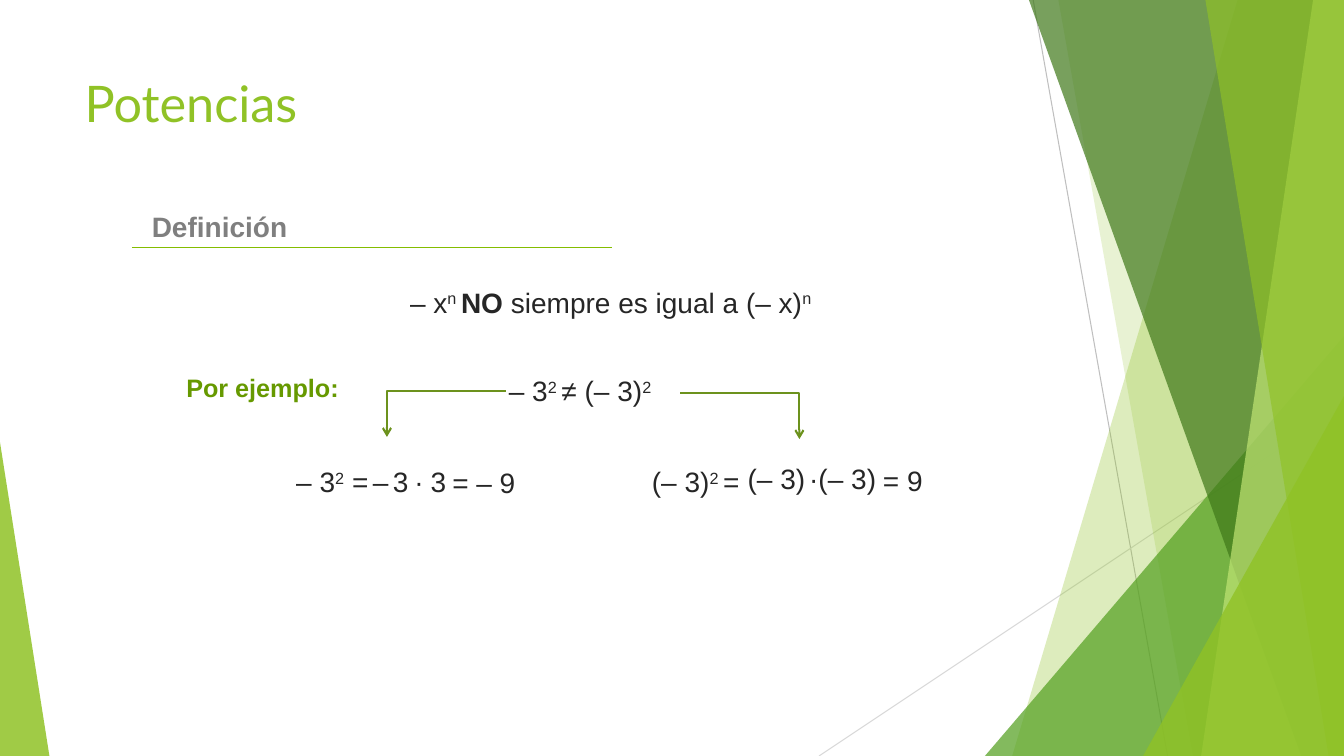
from dataclasses import dataclass

import pptx
import pptx.dml.color
import pptx.enum.shapes
import pptx.enum.text
import pptx.oxml.ns
import pptx.util
from lxml import etree

Pt = pptx.util.Pt
qn = pptx.oxml.ns.qn
CONNECTOR = pptx.enum.shapes.MSO_CONNECTOR


@dataclass(frozen=True)
class Theme:
    title_font: str = "Lato"
    body_font: str = "Arial"
    title_size: int = 36
    body_size: int = 20
    label_size: int = 18
    lime: str = "90C226"
    green: str = "54A021"
    forest: str = "3F7819"
    pale: str = "C0E474"
    ink: str = "262626"
    grey: str = "7F7F7F"
    label: str = "669900"
    rule: str = "84BD00"
    arrow: str = "6C921D"
    hairline: str = "BFBFBF"
    light_hairline: str = "D9D9D9"


T = Theme()
W, H = 960, 540


def rgb(color):
    return pptx.dml.color.RGBColor.from_string(color)


def set_format(r, color, **values):
    r.font.color.rgb = rgb(color)
    for name, value in values.items():
        setattr(r.font, name, value)


def fill(sp, color, opacity):
    """Fill a shape with a colour of the given opacity in percent."""
    sp.shadow.inherit = False
    sp.line.fill.background()
    sp.fill.solid()
    sp.fill.fore_color.rgb = rgb(color)
    clr = sp.fill._xPr.find(".//" + qn("a:srgbClr"))
    etree.SubElement(clr, qn("a:alpha")).set("val", str(opacity * 1000))


def add_line(s, x1, y1, x2, y2, color, width=0.75, kind=CONNECTOR.STRAIGHT):
    c = s.shapes.add_connector(kind, Pt(x1), Pt(y1), Pt(x2), Pt(y2))
    c.line.color.rgb = rgb(color)
    c.line.width = Pt(width)
    etree.SubElement(c._element.spPr, qn("a:effectLst"))
    return c


def add_elbow_arrow(s, x, y, dx, dy):
    """Arrow that runs sideways by dx, then down by dy."""
    c = add_line(s, x, y, x + dx, y + dy, T.arrow, 1.5, CONNECTOR.ELBOW)
    c._element.spPr.find(qn("a:prstGeom")).set("prst", "bentConnector2")
    etree.SubElement(c.line._get_or_add_ln(), qn("a:tailEnd")).set("type", "arrow")


def add_text(s, x, y, w, h, runs, color=T.ink, size=T.body_size, bold=False):
    """Add one line of text; runs are (text, style) with style '', 'sup' or 'bold'."""
    tf = s.shapes.add_textbox(Pt(x), Pt(y), Pt(w), Pt(h)).text_frame
    tf.word_wrap = False
    for text, style in runs:
        r = tf.paragraphs[0].add_run()
        r.text = text
        set_format(r, color, name=T.body_font, size=Pt(size),
                   bold=bold or style == "bold")
        if style == "sup":
            r.font._element.set("baseline", "30000")


def add_decoration(s, w, h):
    """Translucent facets along the slide edges."""
    add_line(s, 738, 0, 834, h, T.hairline)
    add_line(s, w, 290, 585, h, T.light_hairline)

    def facet(top, bottom, color, opacity):
        fb = s.shapes.build_freeform(Pt(top), 0)
        fb.add_line_segments([(Pt(w), 0), (Pt(w), Pt(h)), (Pt(bottom), Pt(h))])
        fill(fb.convert_to_shape(), color, opacity)

    def corner(x, y, width, apex, color, opacity):
        sp = s.shapes.add_shape(pptx.enum.shapes.MSO_SHAPE.ISOSCELES_TRIANGLE,
                                Pt(x), Pt(y), Pt(width), Pt(h - y))
        sp.adjustments[0] = apex
        fill(sp, color, opacity)

    facet(884, 723, T.lime, 30)
    facet(756, 852, T.lime, 20)
    corner(703.5, 240, w - 703.5, 1, T.green, 72)
    facet(735, 929.5, T.forest, 70)
    facet(938, 858, T.pale, 70)
    facet(861, 949, T.lime, 65)
    corner(816.5, 283, w - 816.5, 1, T.lime, 80)
    corner(0, 316, 35.3, 0, T.lime, 85)


def add_title(s, x, y, w, h, text):
    sp = s.shapes.title
    for name, value in dict(left=x, top=y, width=w, height=h).items():
        setattr(sp, name, Pt(value))
    tf = sp.text_frame
    tf.vertical_anchor = pptx.enum.text.MSO_ANCHOR.TOP
    p = tf.paragraphs[0]
    p.alignment = pptx.enum.text.PP_ALIGN.LEFT
    r = p.add_run()
    r.text = text
    set_format(r, T.lime, name=T.title_font, size=Pt(T.title_size))


def add_heading(s, x, y, w, h, text):
    add_text(s, x + 7, y, w - 7, h, [(text, "")], T.grey, bold=True)
    add_line(s, x, y + h, x + w, y + h, T.rule)


def add_equation(s, x, y, parts):
    """Place parts, each (dx, dy, width, runs), from the left end of a row."""
    for dx, dy, w, runs in parts:
        add_text(s, x + dx, y + dy, w, 31.5, runs)


def add_example(s, x, y):
    """Comparison of two powers, with an arrow to the expansion of each."""
    add_text(s, x, y, 130, 29, [("Por ejemplo:", "")], T.label, T.label_size, True)
    add_text(s, x + 230.4, y + 1.4, 152.6, 31.5,
             [("– 3", ""), ("2 ", "sup"), ("≠ (– 3)", ""), ("2", "sup")])
    add_elbow_arrow(s, x + 235.4, y + 17.2, -85, 32.8)
    add_elbow_arrow(s, x + 360, y + 18.7, 85, 32.8)
    add_equation(s, x + 78.5, y + 66.2, [
        (0, 0, 70.6, [("– 3", ""), ("2", "sup"), (" =", "")]),
        (54.7, 0, 28, [("–", "")]),
        (69, 0, 26, [("3", "")]),
        (85, 0, 36.7, [("∙ 3", "")]),
        (111.5, 0.7, 66, [("= – 9", "")]),
    ])
    add_equation(s, x + 332.6, y + 66.2, [
        (0, 0, 78, [("(– 3)", ""), ("2 ", "sup"), ("=", "")]),
        (68.4, -2.2, 56, [("(– 3)", "")]),
        (112.3, -2.2, 68.4, [("·(– 3)", "")]),
        (165, -0.7, 43, [("= 9", "")]),
    ])


def main():
    prs = pptx.Presentation()
    prs.slide_width, prs.slide_height = Pt(W), Pt(H)
    s = prs.slides.add_slide(prs.slide_layouts[5])
    add_decoration(s, W, H)
    add_title(s, 53.3, 48.2, 676.8, 103.7, "Potencias")
    add_heading(s, 94.3, 145.8, 342.7, 31.3, "Definición")
    add_text(s, 285.8, 200.2, 313.2, 31.5,
             [("– x", ""), ("n ", "sup"), ("NO", "bold"),
              (" siempre es igual a (– x)", ""), ("n", "sup")])
    add_example(s, 126, 262.1)
    prs.save("out.pptx")


if __name__ == "__main__":
    main()
